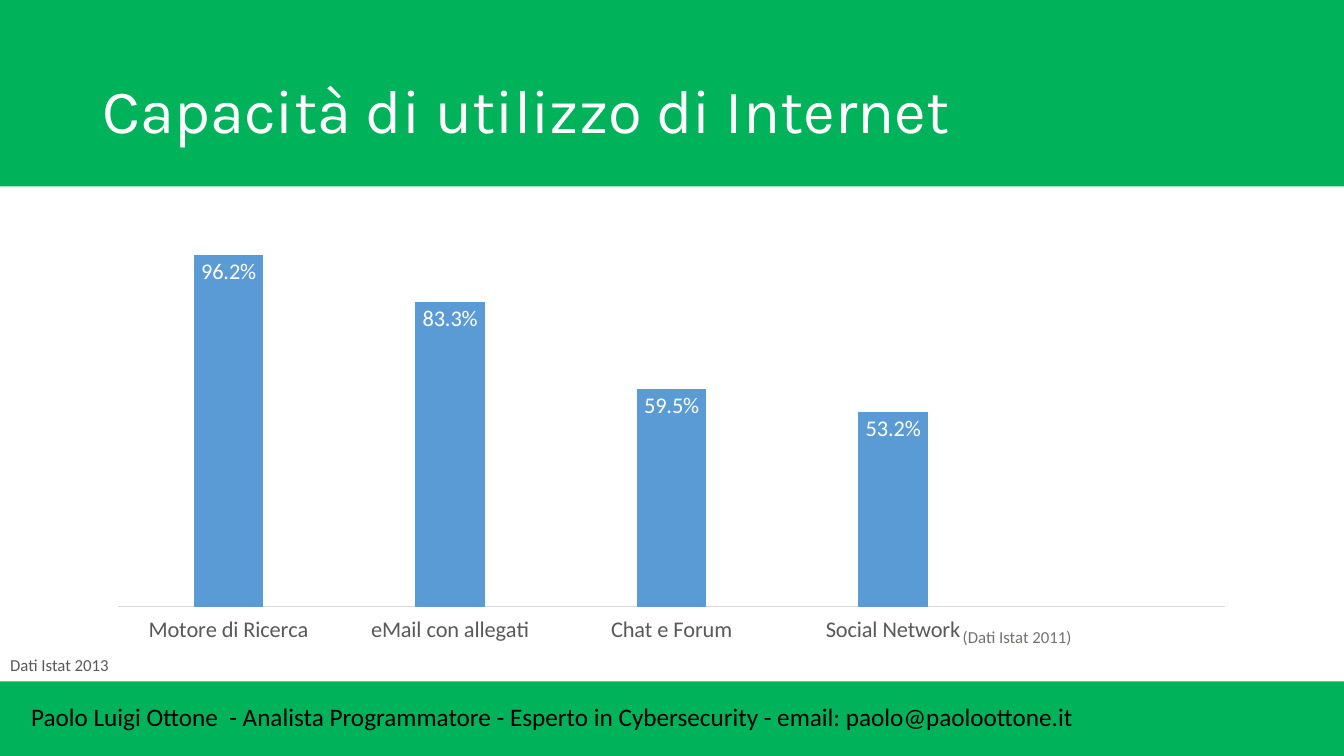
from dataclasses import dataclass

from lxml import etree
from pptx import Presentation
from pptx.chart.data import CategoryChartData
from pptx.dml.color import RGBColor
from pptx.enum.chart import XL_CHART_TYPE, XL_LABEL_POSITION, XL_TICK_LABEL_POSITION, XL_TICK_MARK
from pptx.enum.text import MSO_ANCHOR, PP_ALIGN
from pptx.oxml.ns import qn
from pptx.slide import Slide
from pptx.util import Inches, Pt

COLUMNS = XL_CHART_TYPE.COLUMN_CLUSTERED
INSIDE_END = XL_LABEL_POSITION.INSIDE_END
LABELS_LOW = XL_TICK_LABEL_POSITION.LOW
NO_TICK = XL_TICK_MARK.NONE
MIDDLE, TOP = MSO_ANCHOR.MIDDLE, MSO_ANCHOR.TOP
LEFT, CENTER = PP_ALIGN.LEFT, PP_ALIGN.CENTER


@dataclass(frozen=True)
class Theme:
    green: str = "00B25A"
    white: str = "FFFFFF"
    black: str = "000000"
    blue: str = "5B9BD5"
    gray: str = "595959"
    warm_gray: str = "767171"
    axis: str = "D9D9D9"
    heading_font: str = "Karla"
    body_font: str = "Calibri"
    title_size: int = 44
    footer_size: int = 18
    chart_size: int = 16
    note_size: int = 12


THEME = Theme()


@dataclass(frozen=True)
class Box:
    left: float
    top: float
    width: float
    height: float

    def emu(self) -> tuple[int, ...]:
        return tuple(Inches(n) for n in (self.left, self.top, self.width, self.height))


@dataclass(frozen=True)
class Band:
    box: Box
    outlined: bool = False


@dataclass(frozen=True)
class Caption:
    text: str
    box: Box
    size: int
    color: str
    font: str = THEME.body_font
    align: int = LEFT
    anchor: int = TOP
    wrap: bool = True
    line_spacing: float = 1.0


BANDS = (
    Band(Box(0, 0, 13.33, 1.85)),
    Band(Box(0, 6.76, 13.33, 0.74)),
    Band(Box(10.4, 6.77, 2.73, 0.67), outlined=True),
)
CAPTIONS = (
    Caption("Capacità di utilizzo di Internet", Box(0.92, 0.4, 11.5, 1.45),
            THEME.title_size, THEME.white, THEME.heading_font, anchor=MIDDLE, line_spacing=0.9),
    Caption("Dati Istat 2013", Box(0, 6.47, 1.18, 0.28), THEME.note_size, THEME.gray,
            align=CENTER, wrap=False, line_spacing=0.9),
    Caption("(Dati Istat 2011)", Box(9.45, 6.17, 1.38, 0.3), THEME.note_size, THEME.warm_gray),
    Caption("Paolo Luigi Ottone  - Analista Programmatore - Esperto in Cybersecurity"
            " - email: paolo@paoloottone.it",
            Box(0.21, 6.91, 12.92, 0.4), THEME.footer_size, THEME.black),
)
SKILLS = {
    "Motore di Ricerca": 0.962,
    "eMail con allegati": 0.833,
    "Chat e Forum": 0.595,
    "Social Network": 0.532,
    "": None,
}
CHART_BOX = Box(0.92, 1.65, 11.29, 5.01)
PLOT_LAYOUT = {"layoutTarget": "inner", "xMode": "edge", "yMode": "edge",
               "x": 0.022, "y": 0.003, "w": 0.973, "h": 0.869}
PERCENT = "0.0%"


def apply_format(target: object, values: dict) -> None:
    for name, value in values.items():
        setattr(target, name, value)


def style_font(font, size: int, color: str, name: str = THEME.body_font) -> None:
    apply_format(font, {"size": Pt(size), "name": name})
    font.color.rgb = RGBColor.from_string(color)


def paint(fill, color: str) -> None:
    fill.solid()
    fill.fore_color.rgb = RGBColor.from_string(color)


def draw_band(slide: Slide, band: Band) -> None:
    rectangle = slide.shapes.add_shape(1, *band.box.emu())
    rectangle.shadow.inherit = False
    paint(rectangle.fill, THEME.green)
    if band.outlined:
        paint(rectangle.line.fill, THEME.green)
        rectangle.line.width = Pt(1)
    else:
        rectangle.line.fill.background()


def draw_caption(slide: Slide, caption: Caption) -> None:
    frame = slide.shapes.add_textbox(*caption.box.emu()).text_frame
    apply_format(frame, {"word_wrap": caption.wrap, "vertical_anchor": caption.anchor})
    paragraph = frame.paragraphs[0]
    apply_format(paragraph, {"alignment": caption.align, "line_spacing": caption.line_spacing})
    run = paragraph.add_run()
    run.text = caption.text
    style_font(run.font, caption.size, caption.color, caption.font)


def fix_plot_area(chart) -> None:
    """Pin the inner plot area to fixed fractions of the chart."""
    plot_area = chart.element.find(".//" + qn("c:plotArea"))
    layout = plot_area.find(qn("c:layout"))
    if layout is None:
        layout = etree.Element(qn("c:layout"))
        plot_area.insert(0, layout)
    manual = etree.SubElement(layout, qn("c:manualLayout"))
    for tag, value in PLOT_LAYOUT.items():
        etree.SubElement(manual, qn("c:" + tag)).set("val", str(value))


def draw_skills_chart(slide: Slide) -> None:
    data = CategoryChartData(number_format=PERCENT)
    data.categories = list(SKILLS)
    data.add_series("Series 1", list(SKILLS.values()))
    chart = slide.shapes.add_chart(COLUMNS, *CHART_BOX.emu(), data).chart
    apply_format(chart, {"has_legend": False, "has_title": False})
    style_font(chart.font, THEME.chart_size, THEME.gray)
    fix_plot_area(chart)

    value_axis = chart.value_axis
    apply_format(value_axis, {"minimum_scale": 0, "maximum_scale": 1.2,
                              "has_major_gridlines": False, "visible": False})
    value_axis.tick_labels.number_format = PERCENT
    category_axis = chart.category_axis
    apply_format(category_axis, {"major_tick_mark": NO_TICK, "minor_tick_mark": NO_TICK,
                                 "tick_label_position": LABELS_LOW})
    style_font(category_axis.tick_labels.font, THEME.chart_size, THEME.gray)
    paint(category_axis.format.line.fill, THEME.axis)
    category_axis.format.line.width = Pt(0.75)

    plot = chart.plots[0]
    apply_format(plot, {"gap_width": 219, "overlap": -27, "vary_by_categories": False})
    skill_series = plot.series[0]
    paint(skill_series.format.fill, THEME.blue)
    labels = skill_series.data_labels
    apply_format(labels, {"show_value": True, "position": INSIDE_END,
                          "number_format": PERCENT, "number_format_is_linked": False})
    style_font(labels.font, THEME.chart_size, THEME.white)


def main() -> None:
    deck = Presentation()
    apply_format(deck, {"slide_width": Inches(13.33), "slide_height": Inches(7.5)})
    slide = deck.slides.add_slide(deck.slide_layouts[6])
    for band in BANDS:
        draw_band(slide, band)
    draw_skills_chart(slide)
    for caption in CAPTIONS:
        draw_caption(slide, caption)
    deck.save("out.pptx")


if __name__ == "__main__":
    main()
